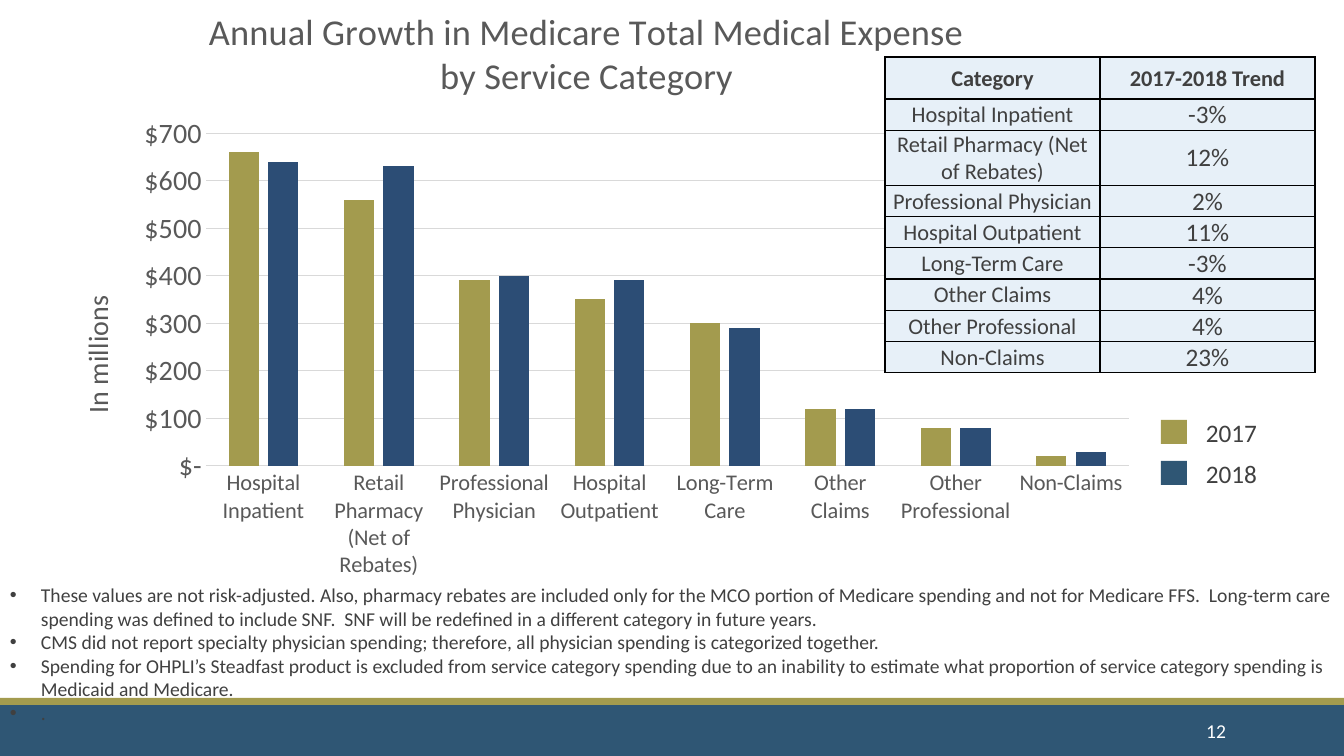
from lxml.etree import SubElement
from pptx import Presentation
from pptx.chart.data import CategoryChartData
from pptx.dml.color import RGBColor
from pptx.enum.chart import XL_CHART_TYPE, XL_TICK_MARK
from pptx.enum.shapes import MSO_SHAPE
from pptx.enum.text import MSO_ANCHOR, PP_ALIGN
from pptx.oxml import parse_xml
from pptx.oxml.ns import nsdecls, qn
from pptx.util import Pt

SCALE = 914400 / 100.8
FONT = "Calibri"
NAVY = RGBColor(0x2F, 0x56, 0x74)
BLUE = RGBColor(0x2C, 0x4D, 0x75)
OLIVE = RGBColor(0xA3, 0x9B, 0x4E)
DARK = RGBColor(0x40, 0x40, 0x40)
GRAY = RGBColor(0x59, 0x59, 0x59)
RULE = RGBColor(0xD9, 0xD9, 0xD9)
PALE = RGBColor(0xE7, 0xF0, 0xF8)
WHITE = RGBColor(0xFF, 0xFF, 0xFF)

TITLE = "Annual Growth in Medicare Total Medical Expense\nby Service Category"
DATA = [
    ("Hospital Inpatient", 660, 640, "-3%"),
    ("Retail Pharmacy (Net of Rebates)", 560, 630, "12%"),
    ("Professional Physician", 390, 400, "2%"),
    ("Hospital Outpatient", 350, 390, "11%"),
    ("Long-Term Care", 300, 290, "-3%"),
    ("Other Claims", 120, 120, "4%"),
    ("Other Professional", 80, 80, "4%"),
    ("Non-Claims", 20, 30, "23%"),
]
NOTES = [
    "These values are not risk-adjusted. Also, pharmacy rebates are included only for the MCO "
    "portion of Medicare spending and not for Medicare FFS.  Long-term care spending was defined "
    "to include SNF.  SNF will be redefined in a different category in future years.",
    "CMS did not report specialty physician spending; therefore, all physician spending is "
    "categorized together.",
    "Spending for OHPLI’s Steadfast product is excluded from service category spending due to an "
    "inability to estimate what proportion of service category spending is Medicaid and Medicare.",
    ".",
]


def px(num):
    """Turn px into EMU."""
    return round(num * SCALE)


def style(font, size, color, bold=False):
    """Set the look of a font."""
    font.name, font.size, font.bold = FONT, Pt(size), bold
    font.color.rgb = color


def block(slide, box, color):
    """Draw a plain filled rectangle."""
    shape = slide.shapes.add_shape(MSO_SHAPE.RECTANGLE, *map(px, box))
    shape.shadow.inherit = False
    shape.fill.solid()
    shape.fill.fore_color.rgb = color
    shape.line.fill.background()


def label(slide, box, lines, size, color, wrap=True):
    """Add a text box with one paragraph per line."""
    frame = slide.shapes.add_textbox(*map(px, box)).text_frame
    frame.word_wrap = wrap
    frame.text = "\n".join(lines)
    for para in frame.paragraphs:
        style(para.runs[0].font, size, color)
    return frame


def footer(slide, box):
    """Draw the two bars and the page number."""
    left, top, wide, high = box
    block(slide, (left, top + 7, wide, high - 7), NAVY)
    block(slide, (left, top, wide, 7), OLIVE)
    frame = label(slide, (left + 1092, top + 13, 144, 40), ["12"], 14, WHITE)
    frame.vertical_anchor = MSO_ANCHOR.MIDDLE
    frame.paragraphs[0].alignment = PP_ALIGN.RIGHT


def legend(slide, box):
    """Draw the colour key, one row per year."""
    left, top, wide, high = box
    step = high // 2
    for row, (year, color) in enumerate((("2017", OLIVE), ("2018", NAVY))):
        y = top + row * step
        block(slide, (left, y + 8, 26, 24), color)
        label(slide, (left + 35, y, wide - 35, 40), [year], 18, DARK, False)


def notes(slide, box):
    """Add the bulleted remarks."""
    for para in label(slide, box, NOTES, 14, DARK).paragraphs:
        props = para._p.get_or_add_pPr()
        props.set("marL", str(px(31)))
        props.set("indent", str(-px(31)))
        SubElement(props, qn("a:buFont"), typeface="Arial")
        SubElement(props, qn("a:buChar"), char="•")


def place(node, index, **parts):
    """Fix a chart part at fractions of the chart."""
    for old in node.findall(qn("c:layout")):
        node.remove(old)
    layout = parse_xml(f"<c:layout {nsdecls('c')}><c:manualLayout/></c:layout>")
    for key, val in parts.items():
        SubElement(layout[0], qn("c:" + key), val=str(val))
    node.insert(index, layout)


def heading(title, text, size, x, y):
    """Write and place a chart or axis title."""
    frame = title.text_frame
    frame.text = text
    for para in frame.paragraphs:
        style(para.runs[0].font, size, GRAY)
    place(title._element, 1, xMode="edge", yMode="edge", x=x, y=y)
    return frame


def columns(slide, box):
    """Add the column chart of spending."""
    data = CategoryChartData()
    data.categories = [row[0] for row in DATA]
    data.add_series("2017", [row[1] for row in DATA])
    data.add_series("2018", [row[2] for row in DATA])
    chart = slide.shapes.add_chart(XL_CHART_TYPE.COLUMN_CLUSTERED, *map(px, box), data).chart
    chart.has_legend = False
    style(chart.font, 20, GRAY)
    heading(chart.chart_title, TITLE, 26, 0.15, 0.03)
    plot = chart.plots[0]
    plot.gap_width, plot.overlap, plot.vary_by_categories = 150, -30, False
    for series, color in zip(plot.series, (OLIVE, BLUE)):
        series.format.fill.solid()
        series.format.fill.fore_color.rgb = color
    cats, vals = chart.category_axis, chart.value_axis
    for axis, size in ((cats, 16), (vals, 20)):
        axis.major_tick_mark = axis.minor_tick_mark = XL_TICK_MARK.NONE
        style(axis.tick_labels.font, size, GRAY)
    vals.minimum_scale, vals.maximum_scale, vals.major_unit = 0, 700, 100
    vals.tick_labels.number_format = '"$"#,##0;-"$"#,##0;"$-"'
    vals.tick_labels.number_format_is_linked = False
    vals.format.line.fill.background()
    for line in (cats.format.line, vals.major_gridlines.format.line):
        line.color.rgb = RULE
        line.width = Pt(0.75)
    body = heading(vals.axis_title, "In millions", 20, 0.03, 0.5)._txBody.bodyPr
    body.set("rot", "-5400000")
    body.set("vert", "horz")
    area = chart._chartSpace.find(".//" + qn("c:plotArea"))
    place(area, 0, layoutTarget="inner", xMode="edge", yMode="edge", x=0.15, y=0.24, w=0.83, h=0.55)


def border(cell):
    """Give a cell black edges of one point."""
    props = cell._tc.get_or_add_tcPr()
    for side in "LRTB":
        line = SubElement(props, qn("a:ln" + side), w=str(Pt(1)))
        SubElement(SubElement(line, qn("a:solidFill")), qn("a:srgbClr"), val="000000")


def trends(slide, box):
    """Add the table of yearly trends."""
    rows = [("Category", "2017-2018 Trend")] + [(row[0], row[3]) for row in DATA]
    table = slide.shapes.add_table(len(rows), 2, *map(px, box)).table
    for col in table.columns:
        col.width = px(box[2]) // 2
    for r, texts in enumerate(rows):
        table.rows[r].height = px({0: 42, 2: 55}.get(r, 31))
        for c, text in enumerate(texts):
            cell = table.cell(r, c)
            border(cell)
            cell.fill.solid()
            cell.fill.fore_color.rgb = PALE
            cell.margin_left = cell.margin_right = cell.margin_top = px(1)
            cell.margin_bottom = 0
            cell.vertical_anchor = MSO_ANCHOR.MIDDLE
            cell.text_frame.text = text
            para = cell.text_frame.paragraphs[0]
            para.alignment = PP_ALIGN.CENTER
            style(para.runs[0].font, 18 if r and c else 16, DARK, r == 0)


def main():
    """Build the slide and save it."""
    deck = Presentation()
    deck.slide_width, deck.slide_height = px(1344), px(756)
    slide = deck.slides.add_slide(deck.slide_layouts[6])
    footer(slide, (0, 698, 1344, 58))
    legend(slide, (1161, 412, 107, 82))
    notes(slide, (0, 578, 1344, 152))
    columns(slide, (39, -12, 1112, 605))
    trends(slide, (885, 57, 430, 314))
    deck.save("out.pptx")


if __name__ == "__main__":
    main()
